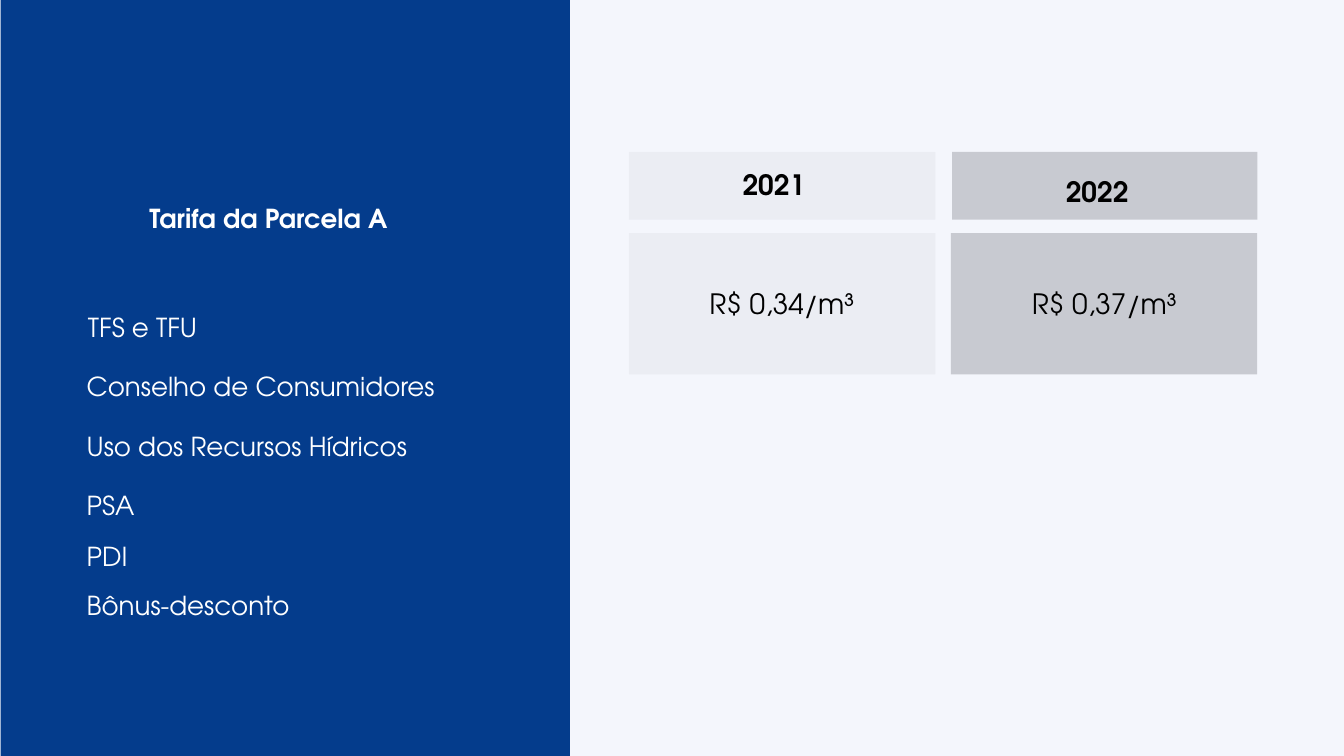
from typing import NamedTuple

from lxml import etree
from pptx import Presentation
from pptx import util as u
from pptx.dml.color import RGBColor
from pptx.enum import shapes, text
from pptx.oxml import ns

FONT = "TeX Gyre Adventor"
PAPER, BLUE, INK = "F4F6FC", "043C8C", "191B27"
WHITE, BLACK = "FFFFFF", "000000"


class Panel(NamedTuple):
    left: float
    top: float
    width: float
    height: float
    color: str
    opacity: int = 100


class Label(NamedTuple):
    words: str
    left: float
    top: float
    width: float
    height: float
    size: int
    leading: int
    color: str
    bold: bool = False
    centered: bool = False


class Year(NamedTuple):
    name: str
    price: str
    head_left: float
    body_left: float
    head_width: float
    opacity: int
    name_left: float
    name_top: float
    price_left: float


YEARS = [
    Year("2021", "R$ 0,34/m³", 9.36, 9.36, 4.56, 4, 11.05, 2.5, 9.98),
    Year("2022", "R$ 0,37/m³", 14.17, 14.15, 4.54, 20, 15.86, 2.59, 14.78),
]

# words, left, top, width
ITEMS = [
    ("TFS e TFU", 1.31, 4.69, 3.07),
    ("Conselho de Consumidores", 1.29, 5.56, 6.18),
    ("Uso dos Recursos Hídricos", 1.29, 6.45, 5.41),
    ("PSA", 1.29, 7.33, 3.07),
    ("PDI", 1.29, 8.09, 3.07),
    ("Bônus-desconto", 1.29, 8.82, 3.07),
]


def paint(fill, color: str, opacity: int = 100) -> None:
    """Fill with a solid colour; opacity is in percent."""
    fill.solid()
    fill.fore_color.rgb = RGBColor.from_string(color)
    if opacity < 100:
        tint = fill._xPr.find(".//" + ns.qn("a:srgbClr"))
        etree.SubElement(tint, ns.qn("a:alpha"), val=str(opacity * 1000))


def draw_panel(page, panel: Panel) -> None:
    box = page.shapes.add_shape(
        shapes.MSO_SHAPE.RECTANGLE,
        *map(u.Inches, (panel.left, panel.top, panel.width, panel.height)))
    box.shadow.inherit = False
    box.line.fill.background()
    paint(box.fill, panel.color, panel.opacity)


def draw_label(page, label: Label) -> None:
    box = page.shapes.add_textbox(
        *map(u.Inches, (label.left, label.top, label.width, label.height)))
    frame = box.text_frame
    frame.margin_left = frame.margin_right = 0
    frame.margin_top = frame.margin_bottom = 0
    frame.word_wrap = True
    frame.auto_size = text.MSO_AUTO_SIZE.SHAPE_TO_FIT_TEXT
    frame.text = label.words
    para = frame.paragraphs[0]
    para.line_spacing = u.Pt(label.leading)
    para.alignment = text.PP_ALIGN.CENTER if label.centered else text.PP_ALIGN.LEFT
    font = para.runs[0].font
    font.name, font.size, font.bold = FONT, u.Pt(label.size), label.bold
    font.color.rgb = RGBColor.from_string(label.color)


def draw_year(page, year: Year) -> None:
    draw_panel(page, Panel(year.head_left, 2.26, year.head_width, 1.01, INK, year.opacity))
    draw_panel(page, Panel(year.body_left, 3.47, 4.56, 2.1, INK, year.opacity))
    draw_label(page, Label(year.name, year.name_left, year.name_top, 3.3, 0.51,
                           30, 36, BLACK, bold=True))
    draw_label(page, Label(year.price, year.price_left, 4.27, 3.3, 0.5,
                           30, 36, BLACK, centered=True))


def main() -> None:
    deck = Presentation()
    deck.slide_width, deck.slide_height = u.Inches(20), u.Inches(11.25)
    page = deck.slides.add_slide(deck.slide_layouts[6])
    paint(page.background.fill, PAPER)

    draw_panel(page, Panel(0.01, 0, 8.47, 11.25, BLUE))
    draw_label(page, Label("Tarifa da Parcela A", 1.29, 2.93, 5.41, 0.51,
                           28, 39, WHITE, bold=True, centered=True))
    for words, left, top, width in ITEMS:
        draw_label(page, Label(words, left, top, width, 0.42, 28, 30, WHITE))
    for year in YEARS:
        draw_year(page, year)

    deck.save("out.pptx")


if __name__ == "__main__":
    main()
